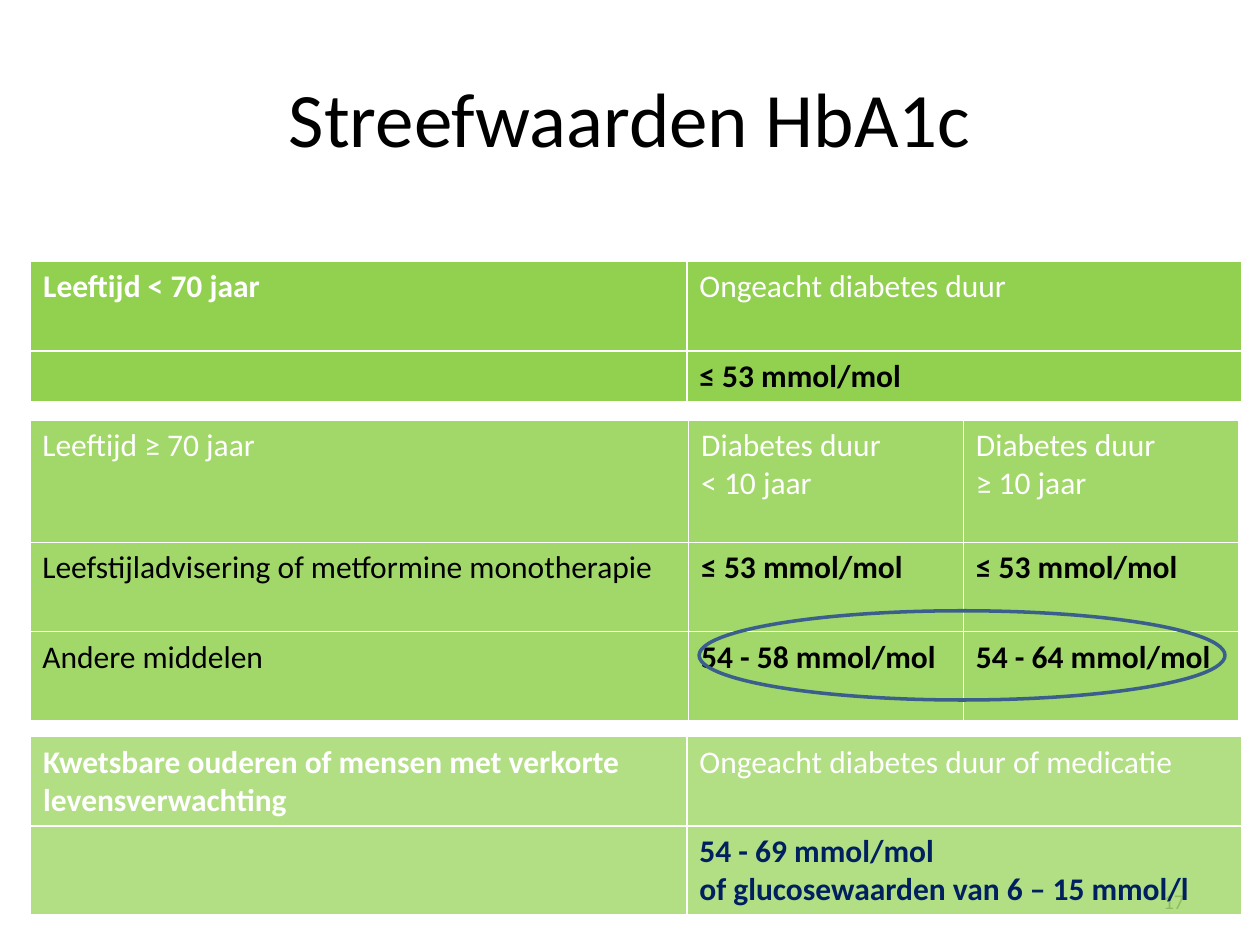
import pptx
import pptx.dml.color
import pptx.enum.shapes
import pptx.enum.text
import pptx.oxml
import pptx.oxml.ns
import pptx.util

Pt = pptx.util.Pt
Color = pptx.dml.color.RGBColor
Align = pptx.enum.text.PP_ALIGN
Anchor = pptx.enum.text.MSO_ANCHOR

WHITE = Color(0xFF, 0xFF, 0xFF)
BLACK = Color(0, 0, 0)
GREEN = Color(0x92, 0xD0, 0x50)
NAVY = Color(0x00, 0x20, 0x60)
BLUE = Color(0x3A, 0x5F, 0x8C)
GRAY = Color(0x8C, 0x8C, 0x8C)

BORDER = (
    f'<a:{{}} {pptx.oxml.ns.nsdecls("a")} w="{Pt(1)}">'
    f'<a:solidFill><a:srgbClr val="{WHITE}"/></a:solidFill></a:{{}}>'
)
ALPHA = f'<a:alpha {pptx.oxml.ns.nsdecls("a")} val="{{}}"/>'


class Deck:
    font = "Calibri"

    def __init__(self, slide):
        self.slide = slide

    def style(self, frame, size, color, bold=False, align=Align.LEFT):
        for para in frame.paragraphs:
            para.alignment = align
            for run in para.runs:
                run.font.name = self.font
                run.font.size = Pt(size)
                run.font.bold = bold
                run.font.color.rgb = color

    def text(self, box, text, size, color, align):
        frame = self.slide.shapes.add_textbox(*map(Pt, box)).text_frame
        frame.word_wrap = True
        frame.vertical_anchor = Anchor.MIDDLE
        frame.text = text
        self.style(frame, size, color, align=align)

    def cell(self, cell, text, color, bold, alpha):
        cell.text_frame.text = text
        self.style(cell.text_frame, 18, color, bold)
        props = cell._tc.get_or_add_tcPr()
        for side in ("lnL", "lnR", "lnT", "lnB"):
            props.append(pptx.oxml.parse_xml(BORDER.format(side, side)))
        cell.fill.solid()
        cell.fill.fore_color.rgb = GREEN
        if alpha < 100:
            tint = props.find(pptx.oxml.ns.qn("a:solidFill"))[0]
            tint.append(pptx.oxml.parse_xml(ALPHA.format(alpha * 1000)))

    def table(self, left, top, cols, rows, cells, alpha=100):
        box = map(Pt, (left, top, sum(cols), sum(rows)))
        table = self.slide.shapes.add_table(len(rows), len(cols), *box).table
        for col, width in zip(table.columns, cols):
            col.width = Pt(width)
        for row, height, items in zip(table.rows, rows, cells):
            row.height = Pt(height)
            for cell, item in zip(row.cells, items):
                self.cell(cell, *item, alpha)

    def ring(self, box, color, width):
        kind = pptx.enum.shapes.MSO_SHAPE.OVAL
        ring = self.slide.shapes.add_shape(kind, *map(Pt, box))
        ring.shadow.inherit = False
        ring.fill.background()
        ring.line.color.rgb = color
        ring.line.width = Pt(width)


def main():
    show = pptx.Presentation()
    show.slide_width, show.slide_height = Pt(720), Pt(540)
    deck = Deck(show.slides.add_slide(show.slide_layouts[6]))

    deck.text((36, 21.6, 648, 90), "Streefwaarden HbA1c", 44, BLACK, Align.CENTER)

    blank = ("", BLACK, False)
    pair = (375, 317)
    deck.table(17.5, 149.5, pair, (51, 29), [
        [("Leeftijd < 70 jaar", WHITE, True),
         ("Ongeacht diabetes duur", WHITE, False)],
        [blank, ("≤ 53 mmol/mol", BLACK, True)],
    ])
    deck.text((516, 500.5, 168, 28.8), "17", 12, GRAY, Align.RIGHT)
    deck.table(17, 240, (376.5, 157, 157.5), (70, 51, 51), [
        [("Leeftijd ≥ 70 jaar", WHITE, False),
         ("Diabetes duur\n< 10 jaar", WHITE, False),
         ("Diabetes duur\n≥ 10 jaar", WHITE, False)],
        [("Leefstijladvisering of metformine monotherapie", BLACK, False),
         ("≤ 53 mmol/mol", BLACK, True),
         ("≤ 53 mmol/mol", BLACK, True)],
        [("Andere middelen", BLACK, False),
         ("54 - 58 mmol/mol", BLACK, True),
         ("54 - 64 mmol/mol", BLACK, True)],
    ], 85)
    deck.table(17.5, 421, pair, (51, 51), [
        [("Kwetsbare ouderen of mensen met verkorte levensverwachting", WHITE, True),
         ("Ongeacht diabetes duur of medicatie", WHITE, False)],
        [blank,
         ("54 - 69 mmol/mol\nof glucosewaarden van 6 – 15 mmol/l", NAVY, True)],
    ], 70)
    deck.ring((399.5, 349, 300.5, 51), BLUE, 2)

    show.save("out.pptx")


if __name__ == "__main__":
    main()
